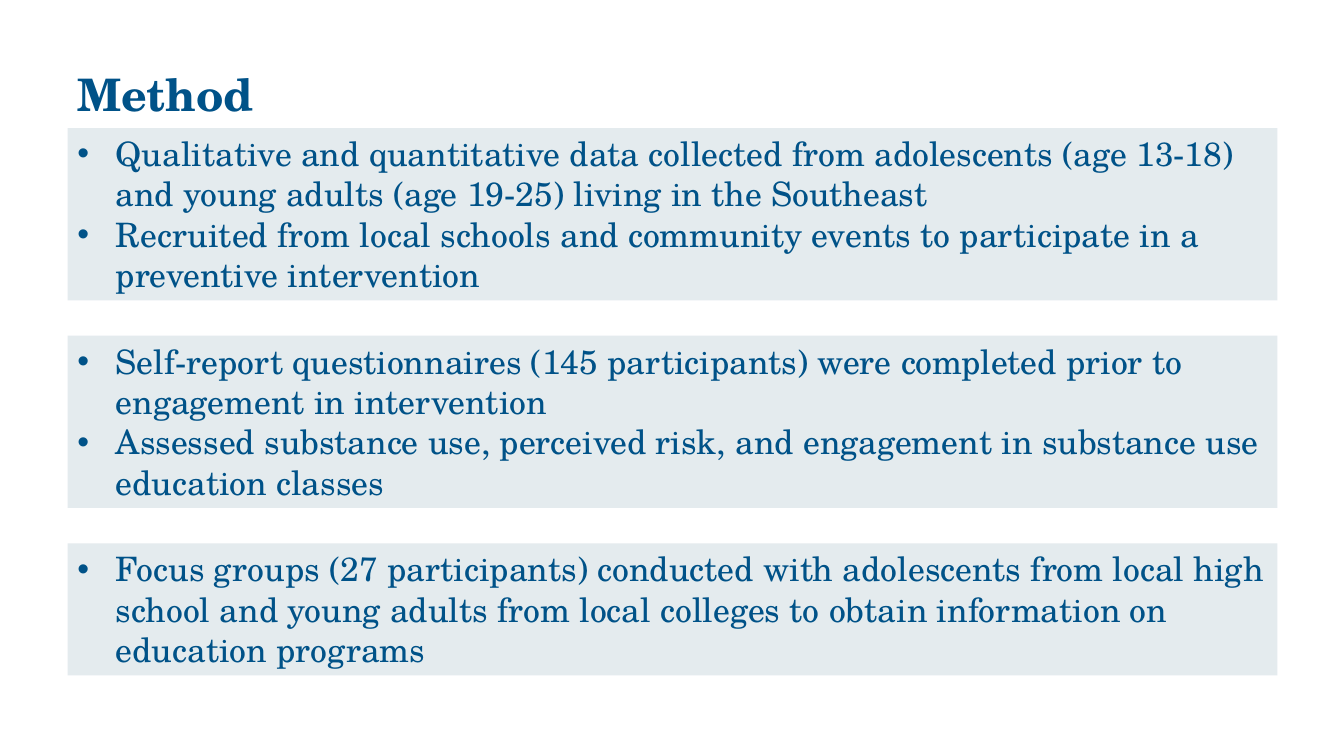
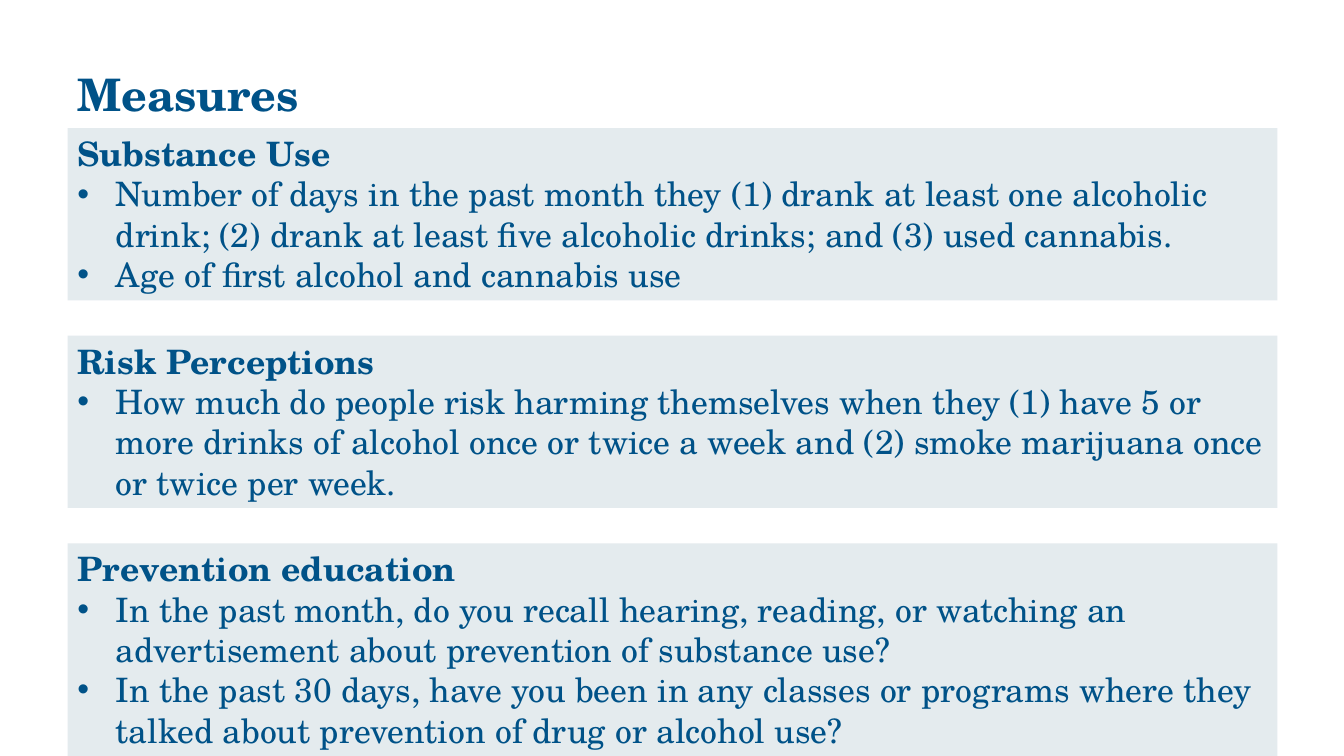
from dataclasses import dataclass

from lxml.etree import SubElement
from pptx import Presentation
from pptx.dml.color import RGBColor as Rgb
from pptx.enum.shapes import MSO_SHAPE as Preset
from pptx.enum.text import MSO_ANCHOR as Anchor, MSO_AUTO_SIZE as AutoSize, PP_ALIGN as Align
from pptx.oxml.ns import qn
from pptx.util import Inches, Pt


@dataclass(frozen=True)
class Theme:
    """Keep the colours, font, type sizes and grid of the deck."""

    ink: Rgb = Rgb(0x00, 0x52, 0x88)
    panel: Rgb = Rgb(0xE4, 0xEB, 0xEE)
    font: str = "TeX Gyre Schola"
    title_size: int = 32
    body_size: int = 24
    left: float = 0.67
    width: float = 12
    title_top: float = 0.3
    title_height: float = 1.25
    first_panel: float = 1.27
    panel_pitch: float = 2.06
    line_height: float = 0.4
    panel_padding: float = 0.11
    indent: float = 0.38


class Deck:
    """Build slides in one shared style."""

    def __init__(self, theme):
        """Start an empty widescreen deck."""
        self.theme = theme
        self.file = Presentation()
        self.file.slide_width, self.file.slide_height = Inches(13.33), Inches(7.5)
        self.page = None

    def add_page(self, title, panels):
        """Add a slide with a title and evenly spaced panels."""
        self.page = self.file.slides.add_slide(self.file.slide_layouts[6])
        self.add_title(title)
        for index, panel in enumerate(panels):
            self.add_panel(self.theme.first_panel + index * self.theme.panel_pitch, **panel)

    def area(self, top, height):
        """Return the position and size of a full-width element."""
        return [Inches(length) for length in (self.theme.left, top, self.theme.width, height)]

    def add_title(self, text):
        """Add the slide title."""
        theme = self.theme
        box = self.page.shapes.add_textbox(*self.area(theme.title_top, theme.title_height))
        self.apply(box.text_frame, word_wrap=True, vertical_anchor=Anchor.MIDDLE)
        self.add_text(box.text_frame.paragraphs[0], text, theme.title_size, bold=True)

    def add_panel(self, top, lines, bullets, heading=None):
        """Add a tinted panel with an optional heading and bullets."""
        theme = self.theme
        height = lines * theme.line_height + theme.panel_padding
        box = self.page.shapes.add_shape(Preset.RECTANGLE, *self.area(top, height))
        box.shadow.inherit = False
        box.fill.solid()
        box.fill.fore_color.rgb = theme.panel
        box.line.fill.background()
        frame = box.text_frame
        self.apply(frame, word_wrap=True, vertical_anchor=Anchor.TOP,
                   auto_size=AutoSize.SHAPE_TO_FIT_TEXT)
        para = frame.paragraphs[0]
        if heading:
            self.add_text(para, heading, theme.body_size, bold=True)
        for index, text in enumerate(bullets):
            if heading or index:
                para = frame.add_paragraph()
            self.add_bullet(para)
            self.add_text(para, text, theme.body_size)

    def add_bullet(self, para):
        """Give a paragraph a hanging bullet."""
        properties = para._p.get_or_add_pPr()
        indent = Inches(self.theme.indent)
        properties.set("marL", str(indent))
        properties.set("indent", str(-indent))
        SubElement(properties, qn("a:buFont")).set("typeface", "Arial")
        SubElement(properties, qn("a:buChar")).set("char", "•")

    def add_text(self, para, text, size, bold=False):
        """Add left-aligned text in the deck's font and colour."""
        para.alignment = Align.LEFT
        span = para.add_run()
        span.text = text
        self.apply(span.font, name=self.theme.font, size=Pt(size), bold=bold)
        span.font.color.rgb = self.theme.ink

    def apply(self, target, **values):
        """Set each format value on the target."""
        for name, value in values.items():
            setattr(target, name, value)


METHOD = [
    {"lines": 4, "bullets": [
        "Qualitative and quantitative data collected from adolescents (age 13-18) "
        "and young adults (age 19-25) living in the Southeast",
        "Recruited from local schools and community events to participate in a "
        "preventive intervention",
    ]},
    {"lines": 4, "bullets": [
        "Self-report questionnaires (145 participants) were completed prior to "
        "engagement in intervention",
        "Assessed substance use, perceived risk, and engagement in substance use "
        "education classes",
    ]},
    {"lines": 3, "bullets": [
        "Focus groups (27 participants) conducted with adolescents from local high "
        "school and young adults from local colleges to obtain information on "
        "education programs",
    ]},
]

MEASURES = [
    {"lines": 4, "heading": "Substance Use", "bullets": [
        "Number of days in the past month they (1) drank at least one alcoholic "
        "drink; (2) drank at least five alcoholic drinks; and (3) used cannabis.",
        "Age of first alcohol and cannabis use",
    ]},
    {"lines": 4, "heading": "Risk Perceptions", "bullets": [
        "How much do people risk harming themselves when they (1) have 5 or "
        "more drinks of alcohol once or twice a week and (2) smoke marijuana once "
        "or twice per week.",
    ]},
    {"lines": 5, "heading": "Prevention education", "bullets": [
        "In the past month, do you recall hearing, reading, or watching an "
        "advertisement about prevention of substance use?",
        "In the past 30 days, have you been in any classes or programs where they "
        "talked about prevention of drug or alcohol use?",
    ]},
]


def main():
    """Build and save the deck."""
    deck = Deck(Theme())
    deck.add_page("Method", METHOD)
    deck.add_page("Measures", MEASURES)
    deck.file.save("out.pptx")


if __name__ == "__main__":
    main()
